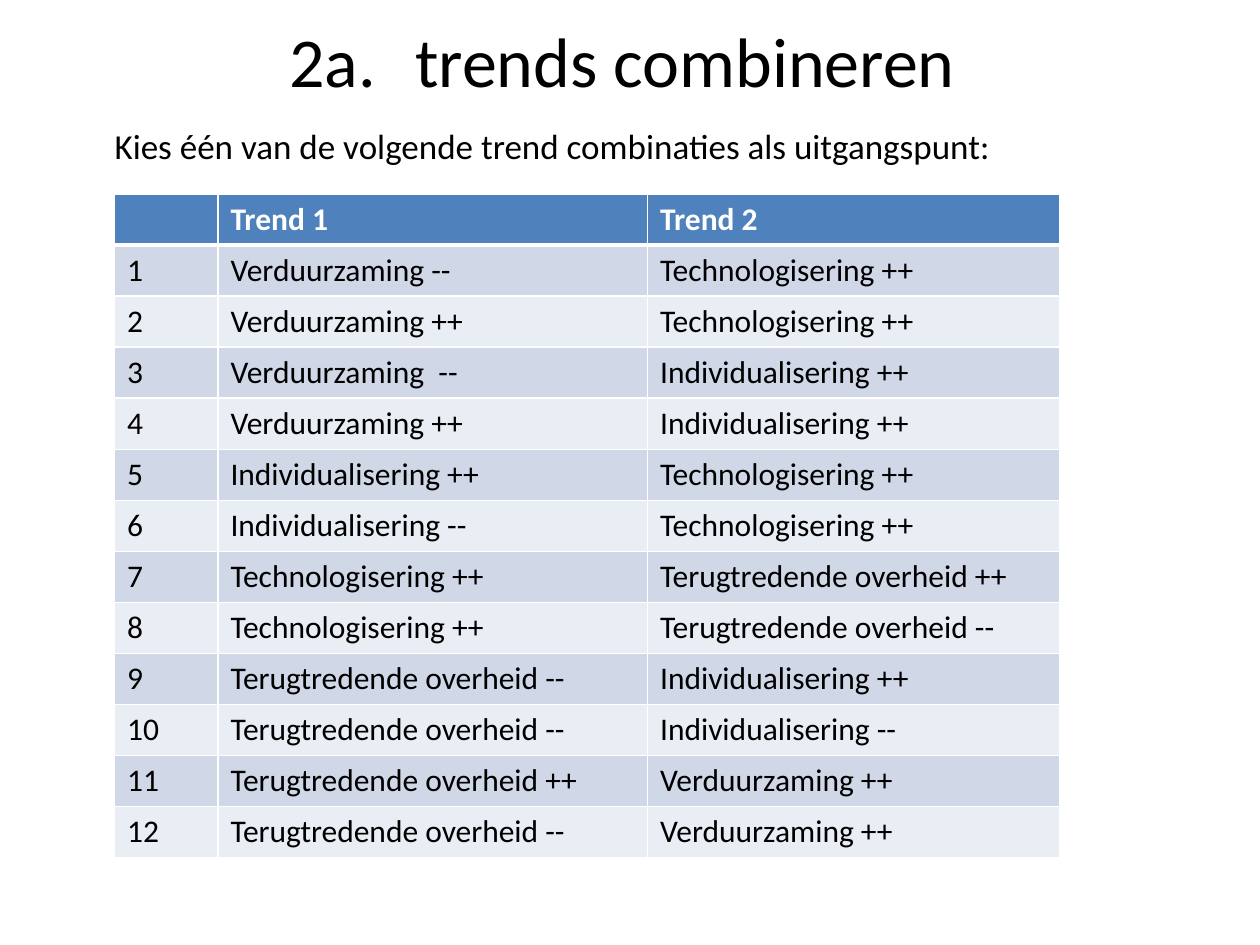
from lxml.etree import SubElement
from pptx import Presentation
from pptx.dml.color import RGBColor
from pptx.enum.text import MSO_ANCHOR, PP_ALIGN
from pptx.oxml.ns import qn
from pptx.util import Inches, Pt

HUES = {"ink": "000000", "white": "FFFFFF", "head": "4F81BD",
        "odd": "D0D8E8", "even": "E9EDF4"}
COLS, ROWS = 100, 75

GREEN, TECH = "Verduurzaming", "Technologisering"
SELF, STATE = "Individualisering", "Terugtredende overheid"
PAIRS = [
    (f"{GREEN} --", f"{TECH} ++"),
    (f"{GREEN} ++", f"{TECH} ++"),
    (f"{GREEN}  --", f"{SELF} ++"),
    (f"{GREEN} ++", f"{SELF} ++"),
    (f"{SELF} ++", f"{TECH} ++"),
    (f"{SELF} --", f"{TECH} ++"),
    (f"{TECH} ++", f"{STATE} ++"),
    (f"{TECH} ++", f"{STATE} --"),
    (f"{STATE} --", f"{SELF} ++"),
    (f"{STATE} --", f"{SELF} --"),
    (f"{STATE} ++", f"{GREEN} ++"),
    (f"{STATE} --", f"{GREEN} ++"),
]


def write(frame, text, size=18, hue="ink", bold=False, align=PP_ALIGN.LEFT):
    para = frame.paragraphs[0]
    para.alignment = align
    run = para.add_run()
    run.text = text
    font = run.font
    font.name, font.size, font.bold = "Calibri", Pt(size), bold
    font.color.rgb = RGBColor.from_string(HUES[hue])


class Deck:
    """Holds the style and the current slide, measured on a grid."""

    def __init__(self):
        self.show = Presentation()
        self.show.slide_width, self.show.slide_height = Inches(10), Inches(7.5)
        self.slide = self.show.slides.add_slide(self.show.slide_layouts[6])

    def col(self, count):
        return int(self.show.slide_width * count / COLS)

    def row(self, count):
        return int(self.show.slide_height * count / ROWS)

    def area(self, left, top, width, height):
        return self.col(left), self.row(top), self.col(width), self.row(height)

    def text(self, place, words, inset=1, anchor=MSO_ANCHOR.TOP, **style):
        frame = self.slide.shapes.add_textbox(*self.area(*place)).text_frame
        frame.word_wrap = True
        frame.vertical_anchor = anchor
        frame.margin_left = self.col(inset)
        write(frame, words, **style)

    def edge(self, cell, side, width):
        line = SubElement(cell._tc.get_or_add_tcPr(), qn(f"a:ln{side}"),
                          w=str(Pt(width)))
        fill = SubElement(line, qn("a:solidFill"))
        SubElement(fill, qn("a:srgbClr"), val=HUES["white"])

    def cell(self, cell, words, fill, first, second, **style):
        for side in "LRTB":
            thick = first and side == "B" or second and side == "T"
            self.edge(cell, side, 3 if thick else 1)
        cell.fill.solid()
        cell.fill.fore_color.rgb = RGBColor.from_string(HUES[fill])
        write(cell.text_frame, words, **style)

    def table(self, place, widths, data):
        grid = self.slide.shapes.add_table(
            len(data), len(widths), *self.area(*place)).table
        for col, width in zip(grid.columns, widths):
            col.width = self.col(width)
        for num, line in enumerate(data):
            first = num == 0
            fill = "head" if first else "odd" if num % 2 else "even"
            for spot, words in enumerate(line):
                self.cell(grid.cell(num, spot), words, fill, first, num == 1,
                          hue="white" if first else "ink", bold=first)


def main():
    deck = Deck()
    deck.text((5, 0, 90, 9.4), "2a.\ttrends combineren ", size=40,
              anchor=MSO_ANCHOR.MIDDLE, align=PP_ALIGN.CENTER)
    deck.text((0, 9.4, 100, 63.7),
              "Kies één van de volgende trend combinaties als uitgangspunt:",
              inset=9.1, size=20)
    data = [("", "Trend 1", "Trend 2")]
    data += [(str(num), *pair) for num, pair in enumerate(PAIRS, 1)]
    deck.table((9.1, 15.4, 75, 52.7), (8.2, 34.1, 32.7), data)
    deck.show.save("out.pptx")


if __name__ == "__main__":
    main()
